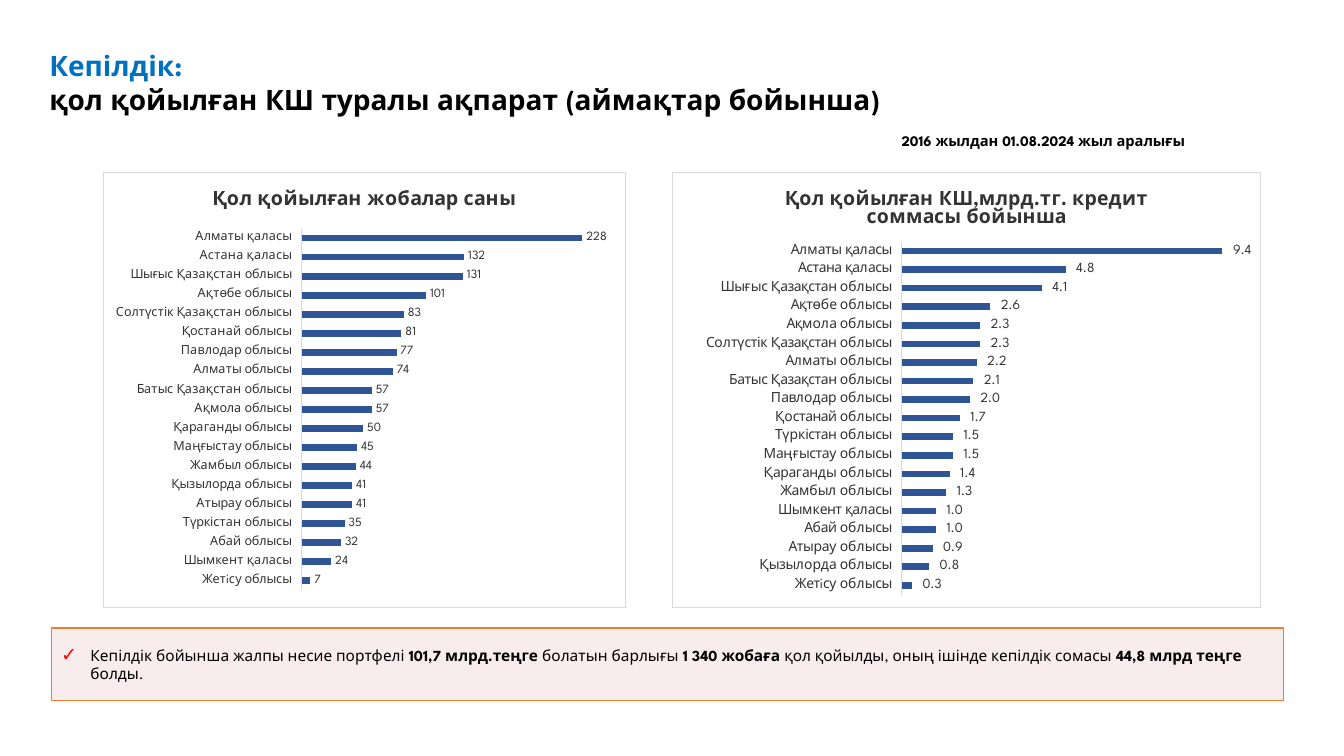
from lxml import etree
from pptx import Presentation
from pptx.chart.data import CategoryChartData as Data
from pptx.dml.color import RGBColor
from pptx.enum.chart import XL_CHART_TYPE as Kind, XL_LABEL_POSITION as Spot
from pptx.enum.chart import XL_TICK_LABEL_POSITION as Label, XL_TICK_MARK as Tick
from pptx.enum.text import MSO_ANCHOR as Anchor, MSO_AUTO_SIZE as Fit, PP_ALIGN as Align
from pptx.oxml import parse_xml
from pptx.oxml.ns import nsdecls, qn
from pptx.util import Pt

FACE = "League Spartan"
BLACK, BLUE, BAR, GREY, RULE = "000000", "0070C0", "2F5597", "333333", "D9D9D9"
PINK, ORANGE, RED = "F2DCDB", "ED7D31", "FF0000"
MONEY = r"_-* #\ ##0.0_р_._-;\-* #\ ##0.0_р_._-;_-"

# Chart values, from the bottom bar to the top one
DEALS = {
    "Жетiсу облысы": 7, "Шымкент қаласы": 24, "Абай облысы": 32,
    "Түркістан облысы": 35, "Атырау облысы": 41, "Қызылорда облысы": 41,
    "Жамбыл облысы": 44, "Маңғыстау облысы": 45, "Қараганды облысы": 50,
    "Ақмола облысы": 57, "Батыс Қазақстан облысы": 57, "Алматы облысы": 74,
    "Павлодар облысы": 77, "Қостанай облысы": 81,
    "Солтүстік Қазақстан облысы": 83, "Ақтөбе облысы": 101,
    "Шығыс Қазақстан облысы": 131, "Астана қаласы": 132, "Алматы қаласы": 228,
}
SUMS = {
    "Жетiсу облысы": 0.3, "Қызылорда облысы": 0.8, "Атырау облысы": 0.9,
    "Абай облысы": 1.0, "Шымкент қаласы": 1.0, "Жамбыл облысы": 1.3,
    "Қараганды облысы": 1.4, "Маңғыстау облысы": 1.5, "Түркістан облысы": 1.5,
    "Қостанай облысы": 1.7, "Павлодар облысы": 2.0,
    "Батыс Қазақстан облысы": 2.1, "Алматы облысы": 2.2,
    "Солтүстік Қазақстан облысы": 2.3, "Ақмола облысы": 2.3,
    "Ақтөбе облысы": 2.6, "Шығыс Қазақстан облысы": 4.1,
    "Астана қаласы": 4.8, "Алматы қаласы": 9.4,
}


def tint(code):
    return RGBColor.from_string(code)


def apply(item, values):
    for name, value in values.items():
        setattr(item, name, value)


class Deck:
    def __init__(self):
        self.show = Presentation()
        apply(self.show, {"slide_width": Pt(960), "slide_height": Pt(540)})
        self.slide = self.show.slides.add_slide(self.show.slide_layouts[1])

    def style(self, font, size, color=BLACK, bold=False):
        apply(font, {"name": FACE, "size": Pt(size), "bold": bold})
        font.color.rgb = tint(color)

    def place(self, shape, box):
        apply(shape, dict(zip(("left", "top", "width", "height"), map(Pt, box))))

    def frame(self, shape, anchor):
        text = shape.text_frame
        apply(text, {"word_wrap": True, "auto_size": Fit.NONE, "vertical_anchor": anchor})
        return text

    def say(self, para, text, size, color=BLACK, bold=False):
        run = para.add_run()
        run.text = text
        self.style(run.font, size, color, bold)

    def title(self, box, lead, rest):
        shape = self.slide.shapes.title
        self.place(shape, box)
        para = self.frame(shape, Anchor.TOP).paragraphs[0]
        para.alignment = Align.LEFT
        self.say(para, lead, 20, BLUE, True)
        para.add_line_break()
        self.say(para, rest, 20, BLACK, True)

    def note(self, box, text):
        shape = self.slide.shapes.add_textbox(*map(Pt, box))
        para = self.frame(shape, Anchor.TOP).paragraphs[0]
        self.say(para, text, 10.5, BLACK, True)

    def callout(self, box, parts):
        shape = self.slide.placeholders[1]
        self.place(shape, box)
        shape.fill.solid()
        shape.fill.fore_color.rgb = tint(PINK)
        shade = shape.element.spPr.find(qn("a:solidFill"))[0]
        etree.SubElement(shade, qn("a:alpha"), val="50000")
        shape.line.color.rgb = tint(ORANGE)
        shape.line.width = Pt(1)
        text = self.frame(shape, Anchor.MIDDLE)
        apply(text, {"margin_left": Pt(6), "margin_right": Pt(6),
                     "margin_top": Pt(3), "margin_bottom": Pt(3)})
        para = text.paragraphs[0]
        self.bullet(para, "✓")
        apply(para, {"space_before": Pt(0), "space_after": Pt(6)})
        for words, bold in parts:
            self.say(para, words, 11, BLACK, bold)

    def bullet(self, para, mark):
        props = para._p.get_or_add_pPr()
        props.set("marL", str(Pt(21.6)))
        props.set("indent", str(-Pt(20.9)))
        color = etree.SubElement(props, qn("a:buClr"))
        etree.SubElement(color, qn("a:srgbClr"), val=RED)
        etree.SubElement(props, qn("a:buSzPct"), val="125000")
        etree.SubElement(props, qn("a:buChar"), char=mark)

    def chart(self, box, head, values, size, top, plot, fmt="General"):
        data = Data(number_format=fmt)
        data.categories = list(values)
        data.add_series(head, list(values.values()))
        chart = self.slide.shapes.add_chart(
            Kind.BAR_CLUSTERED, *map(Pt, box), data).chart
        apply(chart, {"has_legend": False, "has_title": True})
        apply(chart.font, {"name": "Calibri", "size": Pt(10)})
        para = chart.chart_title.text_frame.paragraphs[0]
        self.say(para, head, 14, GREY, True)
        chart.chart_title.include_in_layout = False

        # Axes
        apply(chart.value_axis, {"visible": False, "has_major_gridlines": False,
                                 "minimum_scale": 0, "maximum_scale": top})
        axis = chart.category_axis
        apply(axis, {"major_tick_mark": Tick.NONE, "minor_tick_mark": Tick.NONE,
                     "tick_label_position": Label.LOW})
        self.style(axis.tick_labels.font, size, GREY)
        axis.format.line.color.rgb = tint(RULE)
        axis.format.line.width = Pt(0.75)

        # Bars and their values
        bars = chart.plots[0]
        apply(bars, {"gap_width": 182, "vary_by_categories": False, "has_data_labels": True})
        fill = bars.series[0].format.fill
        fill.solid()
        fill.fore_color.rgb = tint(BAR)
        apply(bars.data_labels, {"show_value": True, "position": Spot.OUTSIDE_END,
                                 "number_format": fmt, "number_format_is_linked": False})
        self.style(bars.data_labels.font, size, GREY)
        self.panel(chart, plot)

    def panel(self, chart, plot):
        root = chart._chartSpace
        area = root.find(".//" + qn("c:plotArea"))
        for old in area.findall(qn("c:layout")):
            area.remove(old)
        spots = "".join(f'<c:{key} val="{val}"/>' for key, val in zip("xywh", plot))
        area.insert(0, parse_xml(
            f'<c:layout {nsdecls("c")}><c:manualLayout><c:layoutTarget val="inner"/>'
            f'<c:xMode val="edge"/><c:yMode val="edge"/>{spots}'
            '</c:manualLayout></c:layout>'))
        root.find(qn("c:txPr")).addprevious(parse_xml(
            f'<c:spPr {nsdecls("c", "a")}><a:solidFill><a:srgbClr val="FFFFFF"/></a:solidFill>'
            f'<a:ln w="{Pt(0.75)}"><a:solidFill><a:srgbClr val="{RULE}"/></a:solidFill></a:ln>'
            '</c:spPr>'))


def main():
    deck = Deck()
    # Heading and period
    deck.title((28, 31, 618, 55), "Кепілдік:",
               "қол қойылған КШ туралы ақпарат (аймақтар бойынша)")
    deck.note((637, 91, 217, 20), "2016 жылдан 01.08.2024 жыл аралығы")

    # Summary
    deck.callout((37, 448.5, 880, 52), [
        ("Кепілдік бойынша жалпы несие портфелі ", False),
        ("101,7 млрд.теңге ", True),
        ("болатын барлығы ", False),
        ("1 340 жобаға ", True),
        ("қол қойылды, оның ішінде кепілдік сомасы ", False),
        ("44,8 млрд теңге ", True),
        ("болды.", False),
    ])

    # Charts
    deck.chart((480, 122.5, 423.5, 312), "Қол қойылған КШ,млрд.тг. кредит соммасы бойынша",
               SUMS, 10, 10, (0.39, 0.16, 0.58, 0.81), MONEY)
    deck.chart((73.5, 122.5, 373.5, 312), "Қол қойылған жобалар саны",
               DEALS, 9, 250, (0.38, 0.13, 0.59, 0.83))
    deck.show.save("out.pptx")


if __name__ == "__main__":
    main()
